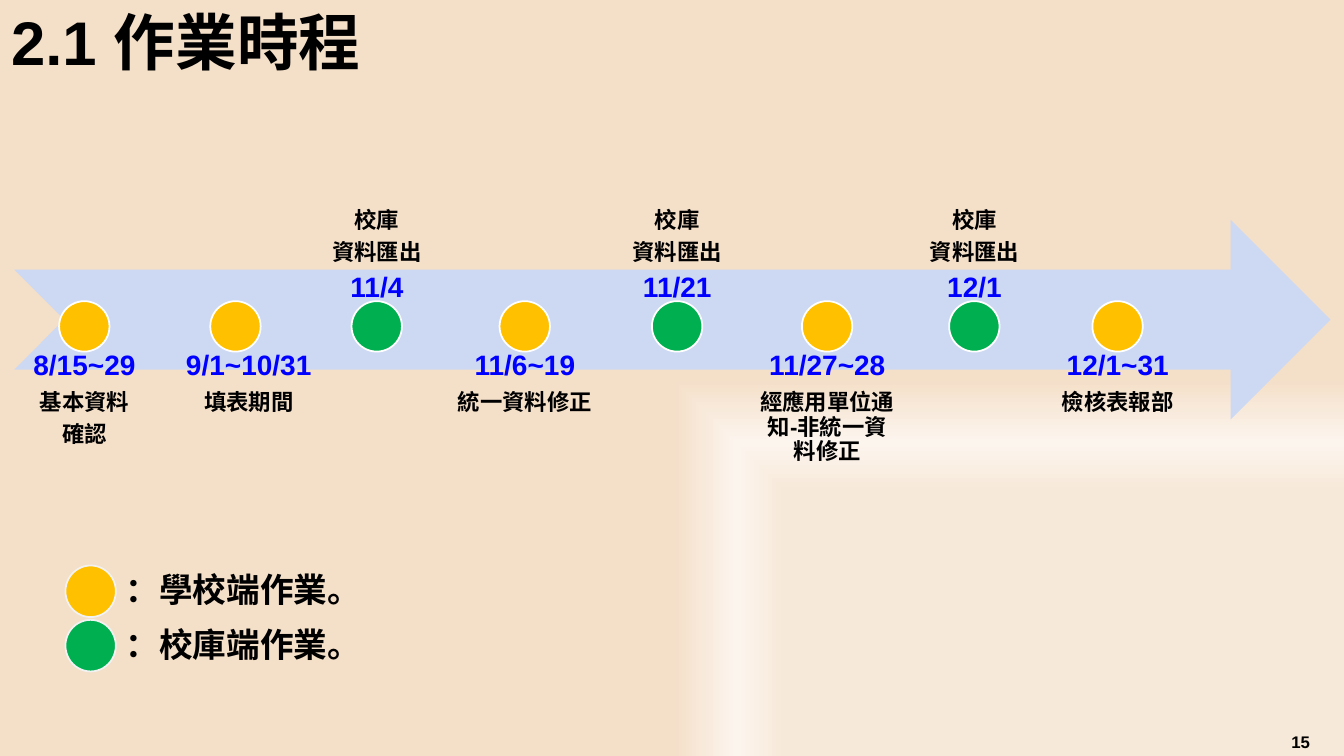
"""Build the work schedule timeline slide."""
from lxml import etree
from pptx import Presentation, util as u
from pptx.dml.color import RGBColor
from pptx.enum import shapes, text
from pptx.oxml import ns

Cm = u.Cm
INK = {"black": "000000", "blue": "0000FF", "gold": "FFC000", "green": "00B050",
       "arrow": "CDD9F3", "white": "FFFFFF", "pale": "F2F2F2"}
GLOW = {0: "F7E8D7", 70: "F7E9D9", 83: "FCF5EE", 100: "F4DFC8"}
MID, TOP, LOW = text.MSO_ANCHOR.MIDDLE, text.MSO_ANCHOR.TOP, text.MSO_ANCHOR.BOTTOM
CENTER = text.PP_ALIGN.CENTER

deck = Presentation()
deck.slide_width, deck.slide_height = Cm(33.87), Cm(19.05)
slide = deck.slides.add_slide(deck.slide_layouts[6])


def draw(kind, box, fill, edge=None):
    """Add a flat shape with an optional thin edge."""
    form = slide.shapes.add_shape(kind, *map(Cm, box))
    form.shadow.inherit = False
    form.fill.solid()
    form.fill.fore_color.rgb = RGBColor.from_string(INK[fill])
    if edge:
        form.line.color.rgb = RGBColor.from_string(INK[edge])
        form.line.width = u.Pt(1.25)
    else:
        form.line.fill.background()


def write(box, lines, frame, para):
    """Add a text box from (words, size, colour) lines."""
    body = slide.shapes.add_textbox(*map(Cm, box)).text_frame
    for key, val in {"word_wrap": True, **frame}.items():
        setattr(body, key, val)
    for num, (words, size, ink) in enumerate(lines):
        part = body.add_paragraph() if num else body.paragraphs[0]
        part.text = words
        for key, val in para.items():
            setattr(part, key, val)
        if len(lines) > 1:
            part.space_after = u.Pt(size * 0.35)
        for key, val in {"name": "Arial", "size": u.Pt(size), "bold": True}.items():
            setattr(part.font, key, val)
        part.font.color.rgb = RGBColor.from_string(INK[ink])


back = slide.background.fill
back.gradient()
grad = slide.background._cSld.find(".//" + ns.qn("a:gradFill"))
for node in list(grad):
    grad.remove(node)
stops = etree.SubElement(grad, ns.qn("a:gsLst"))
for pos, tint in GLOW.items():
    stop = etree.SubElement(stops, ns.qn("a:gs"), pos=str(pos * 1000))
    etree.SubElement(stop, ns.qn("a:srgbClr"), val=tint)
route = etree.SubElement(grad, ns.qn("a:path"), path="rect")
etree.SubElement(route, ns.qn("a:fillToRect"), l="100000", t="100000")

write((31.7, 18.34, 2.16, 0.71), [("15", 12, "black")],
      {"vertical_anchor": MID}, {"alignment": CENTER})
write((0.03, 0.3, 33.83, 1.7), [("2.1 作業時程", 44, "black")],
      {"vertical_anchor": MID}, {"line_spacing": 0.9})
draw(shapes.MSO_SHAPE.NOTCHED_RIGHT_ARROW, (0.36, 5.54, 33.17, 5.03), "arrow")

export = ["校庫", "資料匯出"]
steps = [
    (2.13, 2.13, 3.53, "gold", "8/15~29", ["基本資料", "確認"]),
    (5.94, 6.27, 4.1, "gold", "9/1~10/31", ["填表期間"]),
    (9.5, 9.5, 2.97, "green", "11/4", export),
    (13.23, 13.23, 4.39, "gold", "11/6~19", ["統一資料修正"]),
    (17.07, 17.07, 3.15, "green", "11/21", export),
    (20.85, 20.85, 4.27, "gold", "11/27~28", ["經應用單位通知-非統一資料修正"]),
    (24.56, 24.56, 2.97, "green", "12/1", export),
    (28.17, 28.17, 4.09, "gold", "12/1~31", ["檢核表報部"]),
]
for dot, mid, wide, ink, date, tasks in steps:
    above = ink == "green"
    when = [(date, 20, "blue")]
    what = [(task, 16, "black") for task in tasks]
    pad = Cm(0.3 if above else 0.41)
    frame = {"vertical_anchor": LOW if above else TOP}
    frame |= {"margin_" + side: pad for side in ("left", "right", "top", "bottom")}
    write((mid - wide / 2, 2.92 if above else 8.45, wide, 5.03),
          what + when if above else when + what, frame,
          {"alignment": CENTER, "line_spacing": 0.9})
    draw(shapes.MSO_SHAPE.OVAL, (dot - 0.64, 7.59, 1.27, 1.27), ink, "white")

for row, (ink, words) in enumerate([("gold", "：學校端作業。"), ("green", "：校庫端作業。")]):
    top = 14.25 + row * 1.37
    draw(shapes.MSO_SHAPE.FLOWCHART_CONNECTOR, (1.65, top, 1.27, 1.3), ink, "pale")
    write((2.92, top - 0.03, 6.5, 1.27), [(words, 24, "black")],
          {"word_wrap": False, "auto_size": text.MSO_AUTO_SIZE.SHAPE_TO_FIT_TEXT}, {})

deck.save("out.pptx")
